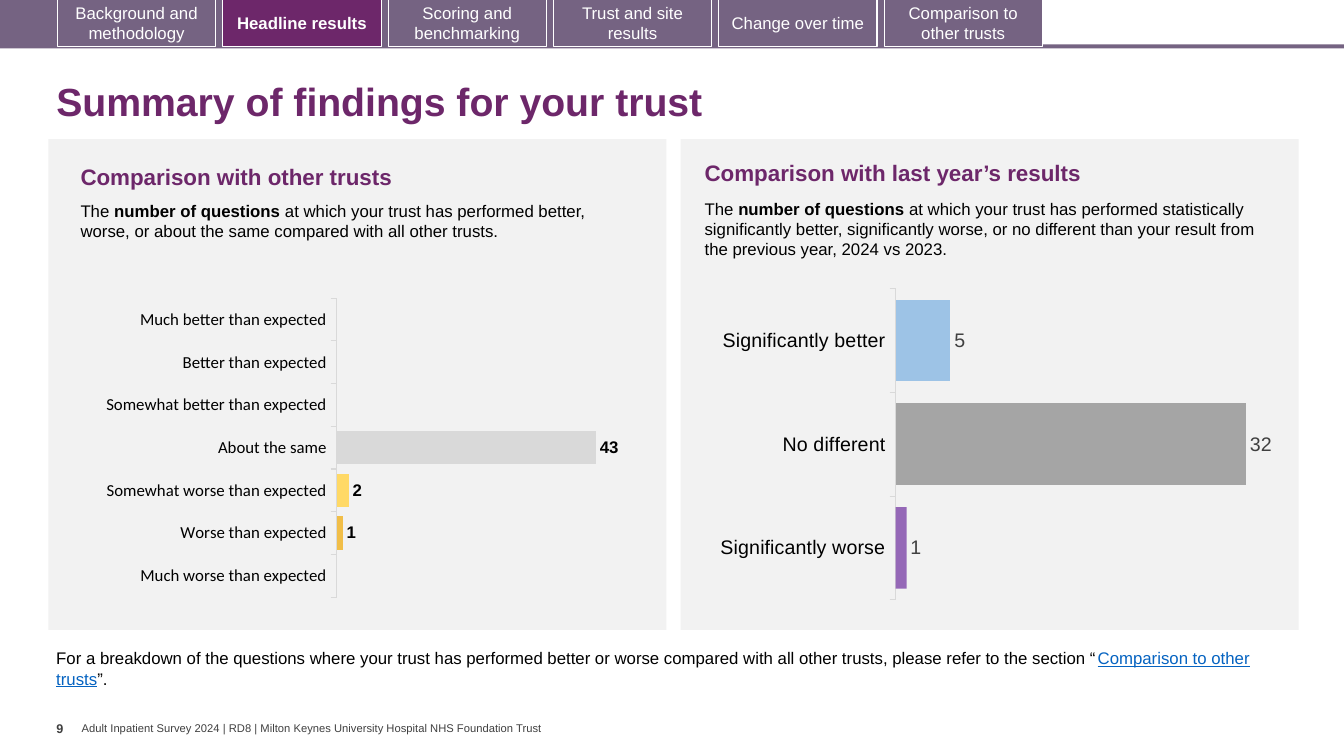
"""Build the summary-of-findings slide with two benchmark bar charts."""
from dataclasses import dataclass
from typing import NamedTuple, Optional

from pptx import Presentation
from pptx import util as u
from pptx.chart.data import CategoryChartData
from pptx.dml.color import RGBColor
from pptx.enum import chart as charts, shapes, text
from pptx.oxml import parse_xml
from pptx.oxml.ns import nsdecls, qn

WIDTH, HEIGHT = u.Inches(13.33), u.Inches(7.5)
PURPLE = RGBColor(0x6D, 0x27, 0x6A)
MAUVE = RGBColor(0x75, 0x63, 0x82)
PANEL_GREY = RGBColor(0xF2, 0xF2, 0xF2)
AXIS_GREY = RGBColor(0xD9, 0xD9, 0xD9)
DARK_GREY = RGBColor(0x40, 0x40, 0x40)
LINK_BLUE = RGBColor(0x05, 0x63, 0xC1)
SERIES_BLUE = RGBColor(0x44, 0x72, 0xC4)
BLACK = RGBColor(0, 0, 0)
WHITE = RGBColor(0xFF, 0xFF, 0xFF)


class Box(NamedTuple):
    """Left, top, width and height as percentages of the slide."""
    left: float
    top: float
    width: float
    height: float

    def lengths(self) -> list[u.Emu]:
        sides = (WIDTH, HEIGHT, WIDTH, HEIGHT)
        return [u.Emu(round(side * share / 100)) for side, share in zip(sides, self)]


class Run(NamedTuple):
    """A stretch of text with one look."""
    words: str
    bold: bool = False
    colour: RGBColor = BLACK
    underline: bool = False


class Bar(NamedTuple):
    """One category of a chart."""
    label: str
    value: Optional[int]
    colour: RGBColor
    opacity: int = 100


@dataclass
class BarChart:
    """A horizontal bar chart with its inner plot area as shares of the frame."""
    box: Box
    bars: list[Bar]
    maximum: int
    plot: tuple[float, float, float, float]
    axis_font: str
    size: int
    label_colour: RGBColor
    label_bold: bool


@dataclass
class Panel:
    """A grey panel with heading, explanation and chart."""
    box: Box
    heading_box: Box
    heading: str
    body_box: Box
    body: str
    chart: BarChart


def write(frame, runs: list[Run], size: float, align=text.PP_ALIGN.LEFT) -> None:
    paragraph = frame.paragraphs[0]
    paragraph.alignment = align
    for item in runs:
        run = paragraph.add_run()
        run.text = item.words
        font = run.font
        font.name, font.size = "Arial", u.Pt(size)
        font.bold, font.underline = item.bold, item.underline
        font.color.rgb = item.colour


def add_text(slide, box: Box, runs: list[Run], size: float, wrap: bool = True,
             middle: bool = False, side_inset: float = 0.1, end_inset: float = 0.05):
    frame = slide.shapes.add_textbox(*box.lengths()).text_frame
    frame.word_wrap = wrap
    frame.margin_left = frame.margin_right = u.Inches(side_inset)
    frame.margin_top = frame.margin_bottom = u.Inches(end_inset)
    frame.vertical_anchor = text.MSO_ANCHOR.MIDDLE if middle else text.MSO_ANCHOR.TOP
    write(frame, runs, size)
    return frame


def add_rectangle(slide, box: Box, fill: Optional[RGBColor], line: Optional[RGBColor] = None):
    shape = slide.shapes.add_shape(shapes.MSO_SHAPE.RECTANGLE, *box.lengths())
    shape.shadow.inherit = False
    if fill is None:
        shape.fill.background()
    else:
        shape.fill.solid()
        shape.fill.fore_color.rgb = fill
    if line is None:
        shape.line.fill.background()
    else:
        shape.line.color.rgb = line
        shape.line.width = u.Pt(0.75)
    return shape


def add_tab(slide, index: int, label: str, active: bool) -> None:
    box = Box(4.28 + 12.3 * index, -0.13, 11.78, 6.27)
    frame = add_rectangle(slide, box, PURPLE if active else None, WHITE).text_frame
    frame.word_wrap = True
    frame.vertical_anchor = text.MSO_ANCHOR.MIDDLE
    write(frame, [Run(label, active, WHITE)], 12, text.PP_ALIGN.CENTER)


def set_plot_area(chart, plot: tuple[float, float, float, float]) -> None:
    area = chart._chartSpace.find(".//" + qn("c:plotArea"))
    for layout in area.findall(qn("c:layout")):
        area.remove(layout)
    sides = "".join(f'<c:{name} val="{share}"/>' for name, share in zip("xywh", plot))
    area.insert(0, parse_xml(
        f'<c:layout {nsdecls("c")}><c:manualLayout><c:layoutTarget val="inner"/>'
        f'<c:xMode val="edge"/><c:yMode val="edge"/>{sides}</c:manualLayout></c:layout>'))


def add_bar_chart(slide, design: BarChart) -> None:
    data = CategoryChartData(number_format="0")
    data.categories = [bar.label for bar in design.bars]
    data.add_series("Series 1", [bar.value for bar in design.bars])
    chart = slide.shapes.add_chart(
        charts.XL_CHART_TYPE.BAR_CLUSTERED, *design.box.lengths(), data).chart
    chart.has_title = chart.has_legend = False
    chart.font.name, chart.font.size = design.axis_font, u.Pt(design.size)
    chart.font.color.rgb = BLACK
    set_plot_area(chart, design.plot)

    chart.category_axis.reverse_order = True
    chart.category_axis.format.line.color.rgb = AXIS_GREY
    chart.category_axis.format.line.width = u.Pt(0.75)
    values = chart.value_axis
    values.minimum_scale, values.maximum_scale = 0, design.maximum
    values.has_major_gridlines = values.visible = False

    plot = chart.plots[0]
    plot.gap_width, plot.vary_by_categories = 27, False
    series = plot.series[0]
    series.invert_if_negative = False
    series.format.fill.solid()
    series.format.fill.fore_color.rgb = SERIES_BLUE
    for index, bar in enumerate(design.bars):
        fill = series.points[index].format.fill
        fill.solid()
        fill.fore_color.rgb = bar.colour
        if bar.opacity < 100:
            for colour in series._element.iter(qn("a:srgbClr")):
                if colour.get("val") == str(bar.colour):
                    colour.append(parse_xml(
                        f'<a:alpha {nsdecls("a")} val="{bar.opacity * 1000}"/>'))
    labels = series.data_labels
    labels.show_value = True
    labels.position = charts.XL_LABEL_POSITION.OUTSIDE_END
    labels.font.name, labels.font.size = "Arial", u.Pt(design.size)
    labels.font.bold, labels.font.color.rgb = design.label_bold, design.label_colour


def add_panel(slide, panel: Panel) -> None:
    add_rectangle(slide, panel.box, PANEL_GREY)
    add_text(slide, panel.heading_box, [Run(panel.heading, True, PURPLE)], 16)
    add_text(slide, panel.body_box,
             [Run("The "), Run("number of questions ", True), Run(panel.body)], 12)
    add_bar_chart(slide, panel.chart)


TABS = ["Background and methodology", "Headline results", "Scoring and benchmarking",
        "Trust and site results", "Change over time", "Comparison to other trusts"]
TRUST_BARS = [
    Bar("Much better than expected", None, RGBColor(0x41, 0x99, 0x99)),
    Bar("Better than expected", None, RGBColor(0x5F, 0xBD, 0x83)),
    Bar("Somewhat better than expected", None, RGBColor(0xA9, 0xD1, 0x8E)),
    Bar("About the same", 43, AXIS_GREY),
    Bar("Somewhat worse than expected", 2, RGBColor(0xFF, 0xD9, 0x66)),
    Bar("Worse than expected", 1, RGBColor(0xF1, 0xBE, 0x48)),
    Bar("Much worse than expected", None, RGBColor(0xE8, 0x77, 0x22))]
YEAR_BARS = [
    Bar("Significantly better", 5, RGBColor(0x9D, 0xC3, 0xE6)),
    Bar("No different", 32, RGBColor(0xA5, 0xA5, 0xA5)),
    Bar("Significantly worse", 1, RGBColor(0x70, 0x30, 0xA0), 71)]
PANELS = [
    Panel(Box(3.6, 18.4, 45.99, 64.93),
          Box(5.25, 20.93, 41.41, 4.93), "Comparison with other trusts",
          Box(5.25, 25.87, 39.68, 9.47), "at which your trust has performed better, worse, "
          "or about the same compared with all other trusts.",
          BarChart(Box(3.08, 36.27, 46.74, 45.47), TRUST_BARS, 50, (0.47, 0.07, 0.48, 0.87),
                   "Calibri", 12, BLACK, True)),
    Panel(Box(50.64, 18.4, 45.99, 64.93),
          Box(51.69, 20.4, 41.11, 4.93), "Comparison with last year’s results",
          Box(51.69, 25.6, 43.06, 9.47), "at which your trust has performed statistically "
          "significantly better, significantly worse, or no different than your result "
          "from the previous year, 2024 vs 2023.",
          BarChart(Box(49.81, 36.4, 46.74, 45.2), YEAR_BARS, 35, (0.36, 0.04, 0.61, 0.91),
                   "Arial", 14, DARK_GREY, False))]


def main() -> None:
    presentation = Presentation()
    presentation.slide_width, presentation.slide_height = WIDTH, HEIGHT
    slide = presentation.slides.add_slide(presentation.slide_layouts[6])
    add_text(slide, Box(6.08, 95.47, 45.76, 1.73), [Run(
        "Adult Inpatient Survey 2024 | RD8 | Milton Keynes University Hospital NHS "
        "Foundation Trust", colour=DARK_GREY)], 8, middle=True, side_inset=0, end_inset=0)
    add_rectangle(slide, Box(-0.23, 5.87, 100.23, 0.53), MAUVE)
    add_rectangle(slide, Box(-0.23, 0, 77.79, 6.27), MAUVE)
    for index, label in enumerate(TABS):
        add_tab(slide, index, label, label == "Headline results")
    title = add_text(slide, Box(3.45, 8.93, 93.7, 9.6),
                     [Run("Summary of findings for your trust", True, PURPLE)], 28, middle=True)
    title.paragraphs[0].line_spacing = 0.9
    for panel in PANELS:
        add_panel(slide, panel)
    add_text(slide, Box(3.45, 85.07, 91.6, 6.67), [
        Run("For a breakdown of the questions where your trust has performed better or worse "
            "compared with all other trusts, please refer to the section “"),
        Run("Comparison to other trusts", colour=LINK_BLUE, underline=True), Run("”.")], 12)
    add_text(slide, Box(4.2, 94.67, 1.88, 5.33), [Run("9", True, DARK_GREY)], 9,
             wrap=False, side_inset=0)
    presentation.save("out.pptx")


if __name__ == "__main__":
    main()
